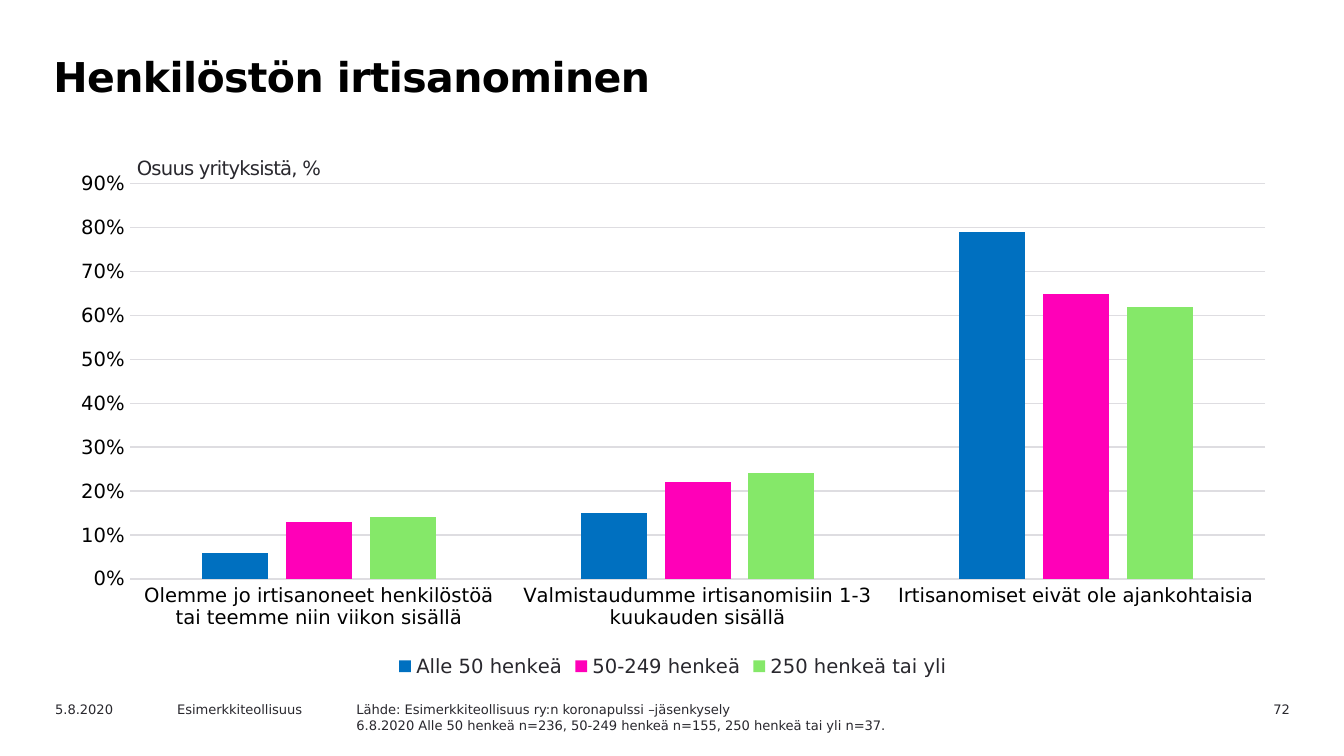
from dataclasses import dataclass
from lxml import etree
from pptx import Presentation
from pptx.chart.data import CategoryChartData
from pptx.dml.color import RGBColor
from pptx.enum.chart import XL_CHART_TYPE, XL_LEGEND_POSITION, XL_TICK_MARK
from pptx.enum.text import MSO_ANCHOR, MSO_AUTO_SIZE, PP_ALIGN
from pptx.oxml.ns import qn
from pptx.util import Pt

COLUMN = XL_CHART_TYPE.COLUMN_CLUSTERED
BOTTOM = XL_LEGEND_POSITION.BOTTOM
NO_TICK = XL_TICK_MARK.NONE
TOP = MSO_ANCHOR.TOP
NO_FIT = MSO_AUTO_SIZE.NONE
LEFT = PP_ALIGN.LEFT
RIGHT = PP_ALIGN.RIGHT
SCALE = 914400 / 134.4


@dataclass(frozen=True)
class Theme:
    face: str = "DejaVu Sans"
    black: str = "000000"
    ink: str = "29282E"
    grid: str = "DEDDE1"
    bars: tuple = ("0070C0", "FF00B8", "85E869")
    head: float = 22
    label: float = 10.5
    base: float = 10
    foot: float = 7


THEME = Theme()

GROUPS = (
    "Olemme jo irtisanoneet henkilöstöä tai teemme niin viikon sisällä",
    "Valmistaudumme irtisanomisiin 1-3 kuukauden sisällä",
    "Irtisanomiset eivät ole ajankohtaisia",
)
SIZES = (
    ("Alle 50 henkeä", (0.06, 0.15, 0.79)),
    ("50-249 henkeä", (0.13, 0.22, 0.65)),
    ("250 henkeä tai yli", (0.14, 0.24, 0.62)),
)
SOURCE = (
    "Lähde: Esimerkkiteollisuus ry:n koronapulssi –jäsenkysely\n"
    "6.8.2020 Alle 50 henkeä n=236, 50-249 henkeä n=155, 250 henkeä tai yli n=37."
)


def px(count):
    return round(count * SCALE)


def style(font, size, color, bold=False):
    font.name = THEME.face
    font.size = Pt(size)
    font.bold = bold
    font.color.rgb = RGBColor.from_string(color)


def write(shape, text, size=THEME.foot, color=THEME.ink, bold=False,
          align=LEFT, space=0, lead=None, inset=None, plain=False):
    frame = shape.text_frame
    frame.word_wrap = True
    frame.auto_size = NO_FIT
    frame.vertical_anchor = TOP
    if inset is not None:
        frame.margin_left = frame.margin_right = px(inset)
        frame.margin_top = frame.margin_bottom = px(inset)
    frame.text = text
    for para in frame.paragraphs:
        para.alignment = align
        para.space_before = Pt(0)
        if lead:
            para.line_spacing = Pt(lead)
        if plain:
            props = para._p.get_or_add_pPr()
            props.set("marL", "0")
            props.set("indent", "0")
            etree.SubElement(props, qn("a:buNone"))
        for run in para.runs:
            style(run.font, size, color, bold)
            if space:
                run._r.get_or_add_rPr().set("spc", str(space))


def place(shape, left, top, width, height):
    shape.left, shape.top = px(left), px(top)
    shape.width, shape.height = px(width), px(height)
    return shape


def add_text(slide, box, text, **form):
    shape = slide.shapes.add_textbox(*map(px, box))
    write(shape, text, **form)


def rule(line):
    line.color.rgb = RGBColor.from_string(THEME.grid)
    line.width = Pt(0.75)


def set_plot(chart, **area):
    plot = chart._chartSpace.chart.plotArea
    outer = plot.find(qn("c:layout"))
    if outer is None:
        outer = etree.Element(qn("c:layout"))
        plot.insert(0, outer)
    inner = etree.SubElement(outer, qn("c:manualLayout"))
    parts = {"layoutTarget": "inner", "xMode": "edge", "yMode": "edge", **area}
    for tag, value in parts.items():
        etree.SubElement(inner, qn("c:" + tag)).set("val", str(value))


def add_bars(slide, box):
    data = CategoryChartData(number_format="0%")
    data.categories = GROUPS
    for name, values in SIZES:
        data.add_series(name, values)
    chart = slide.shapes.add_chart(COLUMN, *map(px, box), data).chart
    style(chart.font, THEME.base, THEME.ink)
    chart.has_title = False
    chart.has_legend = True
    chart.legend.position = BOTTOM
    chart.legend.include_in_layout = False
    style(chart.legend.font, THEME.label, THEME.ink)

    plot = chart.plots[0]
    plot.gap_width = 219
    plot.overlap = -27
    plot.vary_by_categories = False
    for series, color in zip(plot.series, THEME.bars):
        series.format.fill.solid()
        series.format.fill.fore_color.rgb = RGBColor.from_string(color)

    for axis in (chart.category_axis, chart.value_axis):
        axis.major_tick_mark = axis.minor_tick_mark = NO_TICK
        style(axis.tick_labels.font, THEME.label, THEME.black)
    rule(chart.category_axis.format.line)
    scale = chart.value_axis
    scale.minimum_scale, scale.maximum_scale = 0, 0.9
    scale.major_unit = 0.1
    scale.tick_labels.number_format = "0%"
    scale.tick_labels.number_format_is_linked = False
    scale.format.line.fill.background()
    rule(scale.major_gridlines.format.line)
    set_plot(chart, x=0.06, y=0.04, w=0.92, h=0.76)


def main():
    deck = Presentation()
    deck.slide_width, deck.slide_height = px(1344), px(756)
    slide = deck.slides.add_slide(deck.slide_layouts[1])
    title, body = slide.placeholders

    write(place(title, 40, 44, 1175, 95), "Henkilöstön irtisanominen",
          size=THEME.head, color=THEME.black, bold=True, space=-30, lead=27)
    add_bars(slide, (56, 163, 1234, 520))
    add_text(slide, (132, 151, 456, 35), "Osuus yrityksistä, %",
             size=THEME.label, space=-40, inset=5)

    add_text(slide, (42, 695, 134, 24), "5.8.2020")
    add_text(slide, (164, 695, 191, 24), "Esimerkkiteollisuus")
    write(place(body, 343, 695, 614, 43), SOURCE, plain=True)
    add_text(slide, (1177, 695, 126, 24), "72", align=RIGHT)
    deck.save("out.pptx")


if __name__ == "__main__":
    main()
